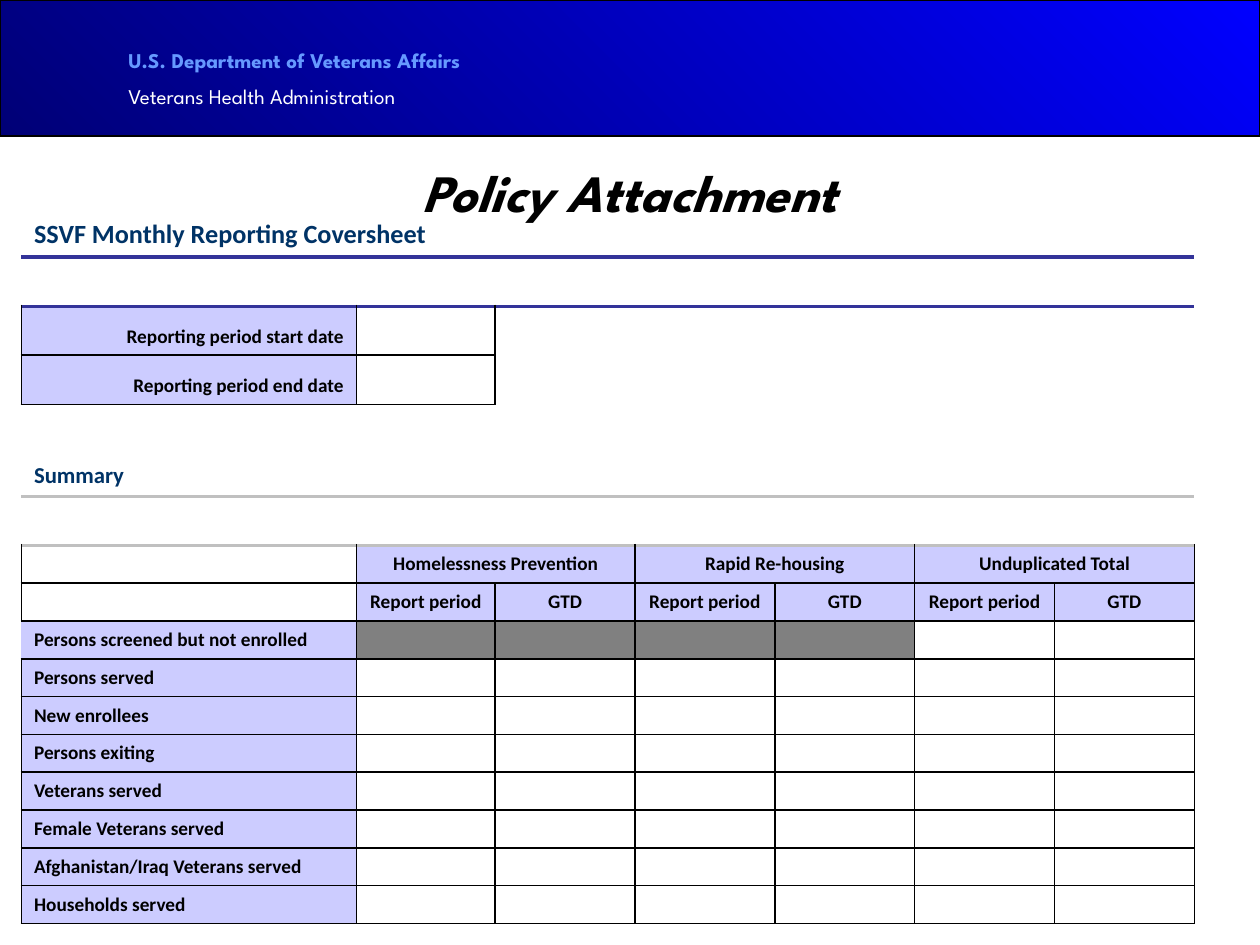
from lxml.etree import SubElement
from pptx import Presentation
from pptx.dml.color import RGBColor
from pptx.enum.shapes import MSO_SHAPE as Shape
from pptx.enum.text import MSO_ANCHOR as Anchor, MSO_AUTO_SIZE as Fit, PP_ALIGN as Align
from pptx.oxml.ns import qn
from pptx.util import Inches, Pt

BLACK = RGBColor(0x00, 0x00, 0x00)
WHITE = RGBColor(0xFF, 0xFF, 0xFF)
NAVY = RGBColor(0x00, 0x00, 0x76)
BLUE = RGBColor(0x00, 0x00, 0xFF)
SKY = RGBColor(0x66, 0x99, 0xFF)
TEAL = RGBColor(0x00, 0x33, 0x66)
INDIGO = RGBColor(0x33, 0x33, 0x99)
SILVER = RGBColor(0xC0, 0xC0, 0xC0)
LILAC = RGBColor(0xCC, 0xCC, 0xFF)
GRAY = RGBColor(0x80, 0x80, 0x80)

HEAD_FONT = "League Spartan"
BODY_FONT = "Calibri"
NO_STYLE = "{2D5ABB26-0587-4C30-8999-92F81FD0307C}"

COLS = [2.66, 1.1] + [1.11] * 5
ROWS = [0.37] + [0.39] * 4 + [0.34, 0.39] + [0.3] * 10
HEADS = {0: ("SSVF Monthly Reporting Coversheet", 15),
         5: ("Summary", 13)}
RULES = {0: (INDIGO, 2), 5: (SILVER, 2)}
DATES = ["Reporting period start date", "Reporting period end date"]
GROUPS = ["Homelessness Prevention", "Rapid Re-housing", "Unduplicated Total"]
COUNTS = ["Persons screened but not enrolled", "Persons served",
          "New enrollees", "Persons exiting", "Veterans served",
          "Female Veterans served", "Afghanistan/Iraq Veterans served",
          "Households served"]
DATE_ROW, GROUP_ROW, COUNT_ROW = 2, 7, 9


def edges(row, col):
    """Return the border of each side of a cell as {side: (colour, width)}."""
    if row in RULES:
        return {"B": RULES[row]}
    if row - 1 in RULES:
        return {"T": RULES[row - 1]}
    if row < GROUP_ROW and (row >= DATE_ROW + len(DATES) or col > 1):
        return {}
    gaps = {GROUP_ROW: "B", GROUP_ROW + 1: "T", COUNT_ROW: "L"}
    gap = gaps.get(row) if col == 0 else None
    return {side: (BLACK, 1) for side in "LRTB" if side != gap}


class Page:
    def __init__(self, deck):
        self.slide = deck.slides.add_slide(deck.slide_layouts[5])

    def style(self, par, font, size, color, bold=True, italic=False):
        for run in par.runs:
            face = run.font
            face.name, face.size = font, Pt(size)
            face.bold, face.italic = bold, italic
            face.color.rgb = color

    def banner(self, left, top, width, height):
        box = self.slide.shapes.add_shape(
            Shape.RECTANGLE, Inches(left), Inches(top), Inches(width), Inches(height))
        box.shadow.inherit = False
        box.fill.gradient()
        box.fill.gradient_angle = 45
        for stop, color in zip(box.fill.gradient_stops, (NAVY, BLUE)):
            stop.color.rgb = color
        box.line.color.rgb = BLACK
        box.line.width = Pt(0.75)

    def label(self, left, top, width, height, lines):
        box = self.slide.shapes.add_textbox(
            Inches(left), Inches(top), Inches(width), Inches(height))
        frame = box.text_frame
        frame.word_wrap = True
        frame.text = "\n".join(text for text, _, _ in lines)
        for par, (_, color, bold) in zip(frame.paragraphs, lines):
            self.style(par, HEAD_FONT, 12, color, bold)
        for par in frame.paragraphs[1:]:
            par.space_before = Pt(6)

    def title(self, left, top, width, height, text):
        box = self.slide.shapes.title
        box.left, box.top = Inches(left), Inches(top)
        box.width, box.height = Inches(width), Inches(height)
        frame = box.text_frame
        frame.text = text
        frame.auto_size = Fit.NONE
        frame.vertical_anchor = Anchor.MIDDLE
        par = frame.paragraphs[0]
        par.alignment = Align.CENTER
        self.style(par, HEAD_FONT, 30, BLACK, italic=True)

    def grid(self, left, top):
        """Add the empty table with its sizes and borders."""
        frame = self.slide.shapes.add_table(
            len(ROWS), len(COLS), Inches(left), Inches(top),
            Inches(sum(COLS)), Inches(sum(ROWS)))
        table = frame.table
        table.first_row = table.horz_banding = False
        table._tbl.tblPr.find(qn("a:tableStyleId")).text = NO_STYLE
        for col, width in zip(table.columns, COLS):
            col.width = Inches(width)
        for r, height in enumerate(ROWS):
            table.rows[r].height = Inches(height)
            for c in range(len(COLS)):
                cell = table.cell(r, c)
                self.border(cell, edges(r, c))
                cell.fill.background()
                par = cell.text_frame.paragraphs[0]
                SubElement(par._p, qn("a:endParaRPr"), sz="1100")
        return table

    def border(self, cell, sides):
        props = cell._tc.get_or_add_tcPr()
        for side, (color, width) in sides.items():
            line = SubElement(props, qn("a:ln" + side), w=str(Pt(width)))
            fill = SubElement(line, qn("a:solidFill"))
            SubElement(fill, qn("a:srgbClr"), val=str(color))

    def entry(self, cell, text, align=Align.LEFT, anchor=Anchor.MIDDLE,
              size=11, color=BLACK, fill=LILAC):
        cell.vertical_anchor = anchor
        if fill:
            cell.fill.solid()
            cell.fill.fore_color.rgb = fill
        par = cell.text_frame.paragraphs[0]
        par.text = text
        par.alignment = align
        self.style(par, BODY_FONT, size, color)


def fill_table(page, table):
    for row, (text, size) in HEADS.items():
        table.cell(row, 0).merge(table.cell(row, len(COLS) - 1))
        page.entry(table.cell(row, 0), text, anchor=Anchor.BOTTOM,
                   size=size, color=TEAL, fill=None)
    for row, text in enumerate(DATES, DATE_ROW):
        page.entry(table.cell(row, 0), text, Align.RIGHT, Anchor.BOTTOM)
    for i, group in enumerate(GROUPS):
        col = 1 + 2 * i
        table.cell(GROUP_ROW, col).merge(table.cell(GROUP_ROW, col + 1))
        page.entry(table.cell(GROUP_ROW, col), group, Align.CENTER)
        for c, text in enumerate(("Report period", "GTD"), col):
            page.entry(table.cell(GROUP_ROW + 1, c), text, Align.CENTER)
    for row, text in enumerate(COUNTS, COUNT_ROW):
        page.entry(table.cell(row, 0), text)
    for col in range(1, 5):
        cell = table.cell(COUNT_ROW, col)
        cell.fill.solid()
        cell.fill.fore_color.rgb = GRAY


def main():
    deck = Presentation()
    deck.slide_width, deck.slide_height = Inches(10), Inches(7.5)
    page = Page(deck)
    page.banner(0, 0, 10, 1.08)
    page.label(0.92, 0.33, 4, 0.6, [
        ("U.S. Department of Veterans Affairs", SKY, True),
        ("Veterans Health Administration", WHITE, False)])
    page.title(0.75, 1.06, 8.5, 0.92, "Policy Attachment")
    fill_table(page, page.grid(0.17, 1.67))
    deck.save("out.pptx")


if __name__ == "__main__":
    main()
